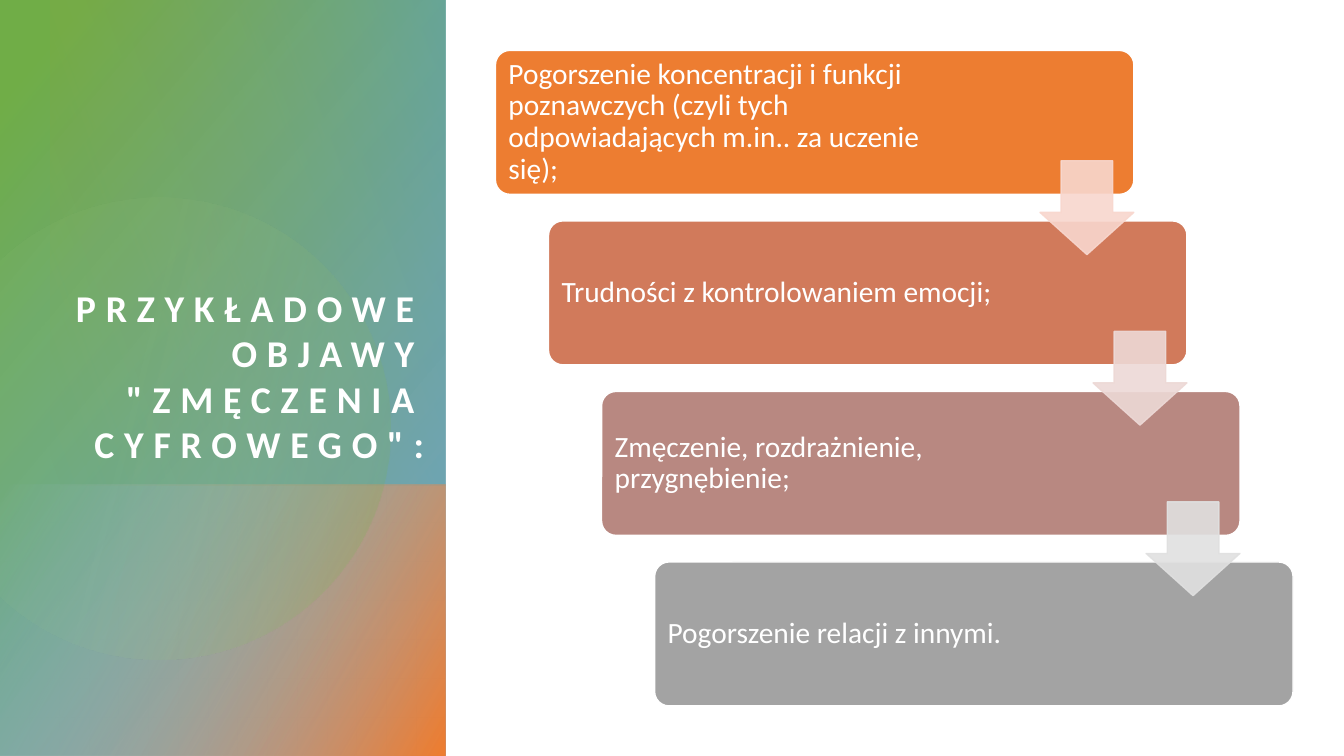
import math
from dataclasses import dataclass

import pptx
import pptx.dml.color
import pptx.enum.shapes
import pptx.enum.text
import pptx.oxml.ns
import pptx.util
from lxml import etree

Pt = pptx.util.Pt
MSO = pptx.enum.shapes.MSO_SHAPE
Anchor = pptx.enum.text.MSO_ANCHOR
Align = pptx.enum.text.PP_ALIGN
qn = pptx.oxml.ns.qn

WHITE = "FFFFFF"
SLIDE_W, SLIDE_H = 960, 540
SIDE_W = 318.24
STEP_X, STEP_Y = 37.9, 121.8


@dataclass
class Stop:
    pos: float
    color: str
    alpha: int = 100


@dataclass
class Panel:
    left: float
    top: float
    width: float
    height: float
    angle: float
    start: Stop
    end: Stop


@dataclass
class Symptom:
    text: str
    color: str
    arrow: str = ""


SIDE_PANELS = [
    Panel(0, 0, SIDE_W, SLIDE_H, 40, Stop(0.08, "70AD47"), Stop(1, "5B9BD5", 89)),
    Panel(0, 346.5, SIDE_W, 193.5, 30, Stop(0, "9DC3E6", 0), Stop(0.99, "ED7D31")),
]
GLOW = Panel(36, 0, 282.24, 346.5, 160, Stop(0, "5B9BD5", 29), Stop(1, "CF9B00", 0))

SYMPTOMS = [
    Symptom("Pogorszenie koncentracji i funkcji poznawczych (czyli tych "
            "odpowiadających m.in.. za uczenie się);", "ED7D31", "F8D7CE"),
    Symptom("Trudności z kontrolowaniem emocji;", "D17A5B", "EDD9D6"),
    Symptom("Zmęczenie, rozdrażnienie, przygnębienie;", "B88881", "E0E0E0"),
    Symptom("Pogorszenie relacji z innymi.", "A3A3A3"),
]


def rgb(value: str) -> pptx.dml.color.RGBColor:
    return pptx.dml.color.RGBColor.from_string(value)


def set_alphas(sp, alphas: list[int]) -> None:
    """Give the shape's colours, in document order, their opacity in percent."""
    colors = list(sp._element.spPr.iter(qn("a:srgbClr")))
    for color, alpha in zip(colors, alphas):
        if alpha < 100:
            etree.SubElement(color, qn("a:alpha")).set("val", str(alpha * 1000))


def fill_gradient(sp, angle: float, start: Stop, end: Stop) -> None:
    """Fill with a two-stop gradient; the angle runs clockwise."""
    sp.shadow.inherit = False
    sp.line.fill.background()
    sp.fill.gradient()
    sp.fill.gradient_angle = 360 - angle
    for gs, stop in zip(sp.fill.gradient_stops, (start, end)):
        gs.color.rgb = rgb(stop.color)
        gs.position = stop.pos
    set_alphas(sp, [start.alpha, end.alpha])


def add_shape(s, kind, left: float, top: float, width: float, height: float):
    sp = s.shapes.add_shape(kind, Pt(left), Pt(top), Pt(width), Pt(height))
    sp.shadow.inherit = False
    return sp


def add_backdrop(s) -> None:
    sp = add_shape(s, MSO.RECTANGLE, 0, 0, SLIDE_W, SLIDE_H)
    sp.fill.solid()
    sp.fill.fore_color.rgb = rgb(WHITE)
    sp.line.fill.background()


def add_panel(s, panel: Panel) -> None:
    sp = add_shape(s, MSO.RECTANGLE, panel.left, panel.top, panel.width, panel.height)
    fill_gradient(sp, panel.angle, panel.start, panel.end)


def add_circle(s) -> None:
    """Draw the large circle, cut off at the slide's left edge, as smooth arcs."""
    cx, cy, radius = 113.8, 306, 164.9
    cut = math.acos(-cx / radius)
    angles = [-cut, -math.pi / 2, 0, math.pi / 2, cut]

    def point(angle: float, tangent: float = 0) -> tuple[int, int]:
        x = cx + radius * (math.cos(angle) - tangent * math.sin(angle))
        y = cy + radius * (math.sin(angle) + tangent * math.cos(angle))
        return Pt(x), Pt(y)

    builder = s.shapes.build_freeform(*point(angles[0]))
    builder.add_line_segments([point(a) for a in angles[1:]], close=True)
    sp = builder.convert_to_shape()
    segments = list(sp._element.spPr.iter(qn("a:lnTo")))
    for segment, a, b in zip(segments, angles, angles[1:]):
        handle = 4 / 3 * math.tan((b - a) / 4)
        segment.tag = qn("a:cubicBezTo")
        for i, (x, y) in enumerate([point(a, handle), point(b, -handle)]):
            pt = etree.Element(qn("a:pt"), x=str(x - sp.left), y=str(y - sp.top))
            segment.insert(i, pt)
    fill_gradient(sp, 14, Stop(0.36, "A9D18E", 6), Stop(1, "70AD47", 26))


def add_run(p, text: str, size: float):
    r = p.add_run()
    r.text = text
    r.font.size = Pt(size)
    r.font.name = "Calibri"
    r.font.color.rgb = rgb(WHITE)
    return r


def set_margins(tf, left: float, top: float, right: float, bottom: float) -> None:
    tf.margin_left, tf.margin_top = Pt(left), Pt(top)
    tf.margin_right, tf.margin_bottom = Pt(right), Pt(bottom)


def add_title(s) -> None:
    sp = s.shapes.title
    s.shapes._spTree.append(sp._element)
    sp.left, sp.top, sp.width, sp.height = Pt(36), Pt(68.4), Pt(267), Pt(264.6)
    tf = sp.text_frame
    tf.word_wrap = True
    tf.auto_size = pptx.enum.text.MSO_AUTO_SIZE.NONE
    tf.vertical_anchor = Anchor.BOTTOM
    set_margins(tf, 0, 0, 0, 0)
    p = tf.paragraphs[0]
    p.alignment = Align.RIGHT
    r = add_run(p, 'PRZYKŁADOWE OBJAWY "ZMĘCZENIA CYFROWEGO":', 27)
    r.font.bold = True
    r._r.get_or_add_rPr().set("spc", "700")


def add_block(s, kind, left: float, top: float, width: float, height: float,
              fill: str, line: str, adjustments: list[float]):
    sp = add_shape(s, kind, left, top, width, height)
    for i, value in enumerate(adjustments):
        sp.adjustments[i] = value
    sp.fill.solid()
    sp.fill.fore_color.rgb = rgb(fill)
    sp.line.color.rgb = rgb(line)
    sp.line.width = Pt(1)
    return sp


def add_symptom(s, i: int, symptom: Symptom) -> None:
    sp = add_block(s, MSO.ROUNDED_RECTANGLE, 353.9 + i * STEP_X, 36 + i * STEP_Y,
                   456, 102.8, symptom.color, WHITE, [0.1])
    tf = sp.text_frame
    tf.word_wrap = True
    tf.vertical_anchor = Anchor.MIDDLE
    set_margins(tf, 6.3, 6.3, 120, 6.3)
    p = tf.paragraphs[0]
    p.alignment = Align.LEFT
    p.line_spacing = 0.9
    add_run(p, symptom.text, 21)


def add_arrow(s, i: int, color: str) -> None:
    sp = add_block(s, MSO.DOWN_ARROW, 742.9 + i * STEP_X, 114.9 + i * STEP_Y,
                   67, 67, color, color, [0.55, 0.45])
    set_alphas(sp, [90, 90])


def main() -> None:
    prs = pptx.Presentation()
    prs.slide_width, prs.slide_height = Pt(SLIDE_W), Pt(SLIDE_H)
    s = prs.slides.add_slide(prs.slide_layouts.get_by_name("Title Only"))
    add_backdrop(s)
    for panel in SIDE_PANELS:
        add_panel(s, panel)
    add_circle(s)
    add_panel(s, GLOW)
    add_title(s)
    for i, symptom in enumerate(SYMPTOMS):
        add_symptom(s, i, symptom)
    for i, symptom in enumerate(SYMPTOMS):
        if symptom.arrow:
            add_arrow(s, i, symptom.arrow)
    prs.save("out.pptx")


if __name__ == "__main__":
    main()
